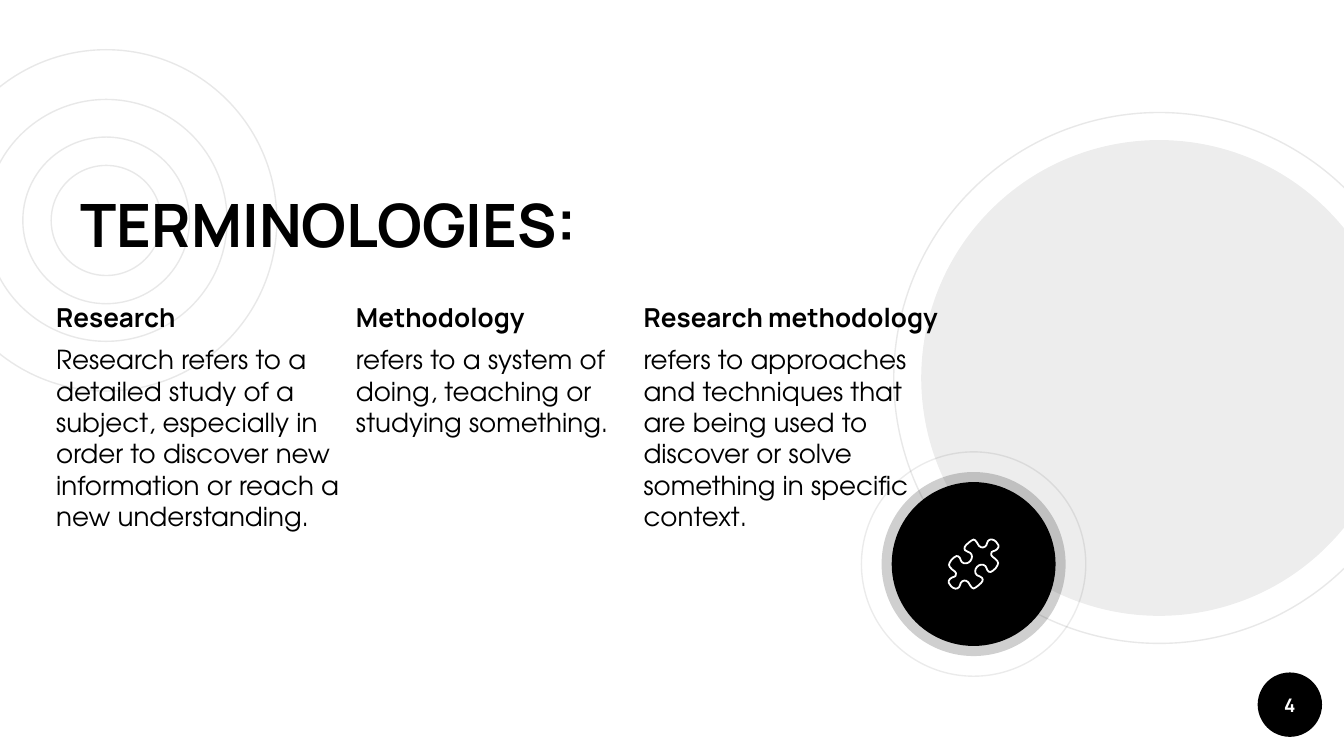
from lxml import etree
from pptx import Presentation
from pptx.dml.color import RGBColor
from pptx.enum import shapes, text
from pptx.oxml.ns import qn
from pptx.util import Pt

COLORS = {"ink": "000000", "ring": "E8E8E8", "paper": "FFFFFF"}
HEAD_FONT, BODY_FONT = "Manrope", "TeX Gyre Adventor"

TITLE = "TERMINOLOGIES:"
TERMS = [
    (23, "Research", "Research refers to a detailed study of a subject, especially in "
     "order to discover new information or reach a new understanding."),
    (183.6, "Methodology", "refers to a system of doing, teaching or studying something."),
    (337.7, "Research methodology", "refers to approaches and techniques that are being "
     "used to discover or solve something in specific context."),
]
PAGE = "4"

TARGET, DISC, BADGE, PAGE_DOT = (56.9, 118.1), (621, 202.5), (521.6, 302.2), (691, 377.5)
# centre, diameter, fill, line, opacity in percent
CIRCLES = [
    (TARGET, 182.9, None, "ring", 100),
    (TARGET, 129.6, None, "ring", 100),
    (TARGET, 89.3, None, "ring", 100),
    (TARGET, 59, None, "ring", 100),
    (PAGE_DOT, 34.5, "ink", None, 100),
    (DISC, 284.4, None, "ring", 100),
    (DISC, 254.9, "ink", None, 7),
    (BADGE, 98.6, "ink", None, 19),
    (BADGE, 87.8, "ink", None, 100),
    (BADGE, 120.2, None, "ink", 7),
]

PUZZLE_SIZE = 37
PUZZLE_HALF = [
    (32, 9.5), (33, 9), (34.5, 8.5), (36, 7.5), (37, 6), (37, 4.5), (36, 3), (35, 1.7),
    (33.5, 0.7), (32, 0.2), (30.5, 0.4), (29.2, 1.4), (28.5, 3), (28, 4.5), (27, 5.6),
    (25.5, 6.2), (24, 6), (22.5, 5), (21, 2.5), (19.7, 0.9), (18.5, 0.3), (17, 1),
    (15, 2.5), (13, 4.3), (12, 5.7), (11.7, 7), (12.2, 8.2), (14, 9.3), (16, 10.2),
    (17, 11.5), (17.3, 13), (17, 14.7), (16, 16.3), (14.7, 17.4), (13, 18), (11.2, 17.9),
    (9.7, 17), (8.9, 15.5), (8.2, 13.8), (7, 12.7), (5.7, 12.6), (4, 13.6), (2, 15.5),
    (0.7, 17.6), (0.2, 19.2), (0.8, 20.7), (2.5, 22.5), (4.5, 24), (5.4, 25.3), (5.3, 26.4),
]


def rgb(name):
    return RGBColor.from_string(COLORS[name])


def paint(sp, fill, line, width=0.75, opacity=100):
    sp.shadow.inherit = False
    for fmt, name in ((sp.fill, fill), (sp.line.fill, line)):
        if name is None:
            fmt.background()
        else:
            fmt.solid()
            fmt.fore_color.rgb = rgb(name)
    if line:
        sp.line.width = Pt(width)
    if opacity < 100:
        for clr in sp.element.spPr.iter(qn("a:srgbClr")):
            etree.SubElement(clr, qn("a:alpha")).set("val", str(opacity * 1000))


def add_circle(s, centre, size, fill, line, opacity):
    left, top = (c - size / 2 for c in centre)
    sp = s.shapes.add_shape(shapes.MSO_SHAPE.OVAL, Pt(left), Pt(top), Pt(size), Pt(size))
    paint(sp, fill, line, opacity=opacity)


def add_puzzle(s):
    points = PUZZLE_HALF + [(PUZZLE_SIZE - x, PUZZLE_SIZE - y) for x, y in PUZZLE_HALF]
    scale = 0.72
    left, top = (c - PUZZLE_SIZE * scale / 2 for c in BADGE)
    points = [(Pt(left + x * scale), Pt(top + y * scale)) for x, y in points]
    builder = s.shapes.build_freeform(*points[0])
    builder.add_line_segments(points[1:], close=True)
    paint(builder.convert_to_shape(), None, "paper", 0.96)


def set_frame(tf, wrap, anchor):
    tf.word_wrap = wrap
    tf.auto_size = text.MSO_AUTO_SIZE.NONE
    tf.vertical_anchor = anchor
    tf.margin_left = tf.margin_right = tf.margin_top = tf.margin_bottom = Pt(7.2)


def write(p, words, size, font=HEAD_FONT, color="ink", bold=True, align=text.PP_ALIGN.LEFT):
    p.text = words
    p.alignment = align
    f = p.runs[0].font
    f.name, f.size, f.bold = font, Pt(size), bold
    f.color.rgb = rgb(color)


def main():
    prs = Presentation()
    prs.slide_width, prs.slide_height = Pt(720), Pt(405)
    s = prs.slides.add_slide(prs.slide_layouts[5])

    for circle in CIRCLES:
        add_circle(s, *circle)
    add_puzzle(s)

    title = s.shapes.title
    s.shapes.element.append(title.element)
    title.left, title.top, title.width, title.height = Pt(36), Pt(92.2), Pt(411), Pt(54)
    set_frame(title.text_frame, True, text.MSO_ANCHOR.BOTTOM)
    write(title.text_frame.paragraphs[0], TITLE, 32)

    for left, term, meaning in TERMS:
        tf = s.shapes.add_textbox(Pt(left), Pt(154), Pt(176.4), Pt(206)).text_frame
        set_frame(tf, True, text.MSO_ANCHOR.TOP)
        write(tf.paragraphs[0], term, 14)
        p = tf.add_paragraph()
        p.space_before = Pt(6)
        write(p, meaning, 14, BODY_FONT, bold=False)

    tf = s.shapes.add_textbox(Pt(680.4), Pt(364.3), Pt(21), Pt(26.6)).text_frame
    set_frame(tf, False, text.MSO_ANCHOR.MIDDLE)
    write(tf.paragraphs[0], PAGE, 10, color="paper", align=text.PP_ALIGN.CENTER)

    prs.save("out.pptx")


if __name__ == "__main__":
    main()
